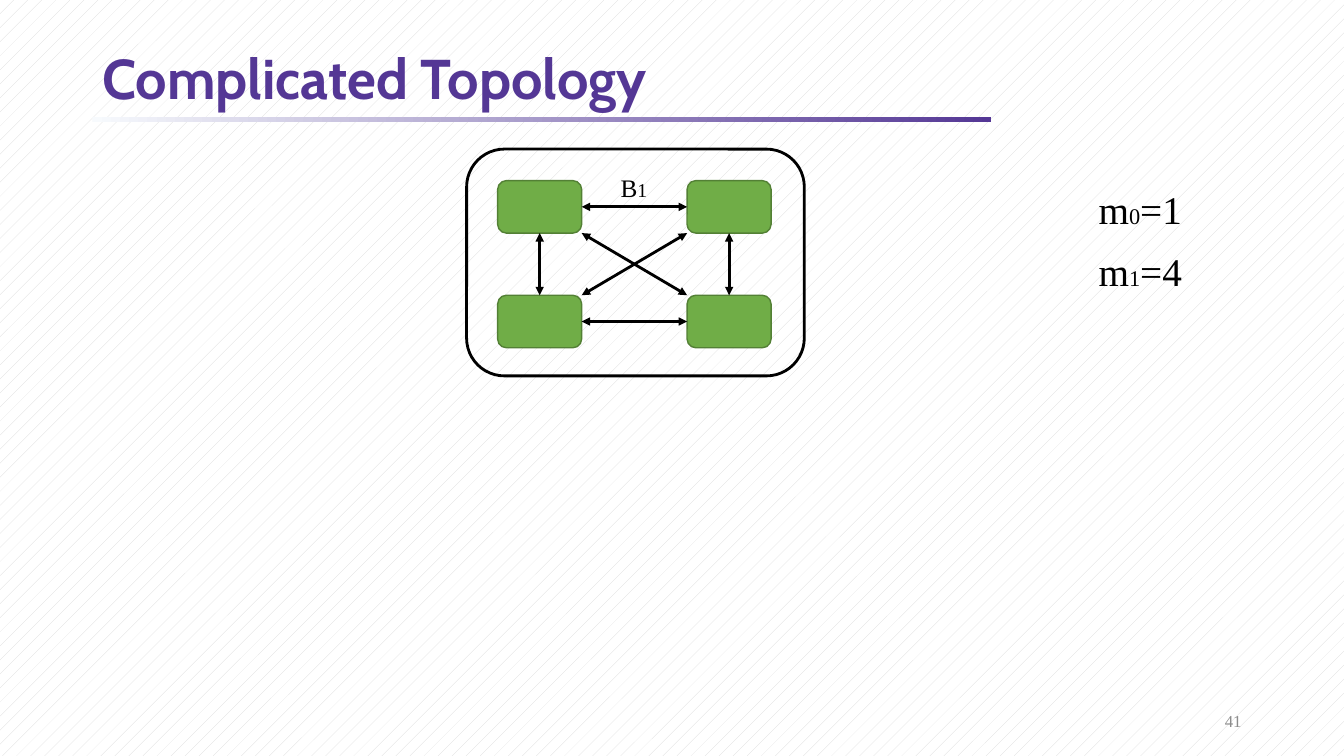
import itertools

import pptx
import pptx.dml.color
import pptx.enum.dml
import pptx.enum.shapes
import pptx.enum.text
import pptx.oxml
import pptx.oxml.ns
import pptx.util

RGBColor = pptx.dml.color.RGBColor
SHAPES = pptx.enum.shapes.MSO_SHAPE
ALIGN = pptx.enum.text.PP_ALIGN
ANCHOR = pptx.enum.text.MSO_ANCHOR

PURPLE = RGBColor(0x54, 0x37, 0x95)
PALE = RGBColor(0xF7, 0xFA, 0xFD)
GREEN = RGBColor(0x70, 0xAD, 0x47)
DARK_GREEN = RGBColor(0x53, 0x80, 0x35)
BLACK = RGBColor(0, 0, 0)
WHITE = RGBColor(0xFF, 0xFF, 0xFF)
LIGHT_GREY = RGBColor(0xD9, 0xD9, 0xD9)
GREY = RGBColor(0x8C, 0x8C, 0x8C)

SERIF = "Times New Roman"
WIDTH, HEIGHT = pptx.util.Inches(13.33), pptx.util.Inches(7.5)
COLUMNS, ROWS = 160, 90

NODE_COLUMNS, NODE_ROWS = (59.25, 81.8), (21.5, 35.15)
NODE_SIZE = (10, 6.25)
TOP, LEFT, BOTTOM, RIGHT = range(4)


def place(column, row, columns, rows):
    """Turn grid units into left, top, width and height."""
    return (int(column * WIDTH / COLUMNS), int(row * HEIGHT / ROWS),
            int(columns * WIDTH / COLUMNS), int(rows * HEIGHT / ROWS))


def set_background(slide):
    fill = slide.background.fill
    fill.patterned()
    fill.pattern = pptx.enum.dml.MSO_PATTERN.PERCENT_5
    fill.fore_color.rgb = LIGHT_GREY
    fill.back_color.rgb = WHITE


def add_text(slide, box, runs, wrap=False, align=ALIGN.LEFT,
             anchor=ANCHOR.TOP, line_spacing=None, **font_format):
    """Add one paragraph made of (text, size in points) runs."""
    frame = slide.shapes.add_textbox(*place(*box)).text_frame
    frame.word_wrap = wrap
    frame.vertical_anchor = anchor
    paragraph = frame.paragraphs[0]
    paragraph.alignment = align
    paragraph.line_spacing = line_spacing
    color = font_format.pop("color", BLACK)
    for text, size in runs:
        run = paragraph.add_run()
        run.text = text
        run.font.color.rgb = color
        values = {"name": SERIF, "size": pptx.util.Pt(size), **font_format}
        for name, value in values.items():
            setattr(run.font, name, value)


def add_rounded_box(slide, box, line_color, line_width, fill_color=None):
    shape = slide.shapes.add_shape(SHAPES.ROUNDED_RECTANGLE, *place(*box))
    shape.shadow.inherit = False
    if fill_color is None:
        shape.fill.background()
    else:
        shape.fill.solid()
        shape.fill.fore_color.rgb = fill_color
    shape.line.color.rgb = line_color
    shape.line.width = pptx.util.Pt(line_width)
    return shape


def add_title_rule(slide):
    shape = slide.shapes.add_shape(SHAPES.RECTANGLE, *place(11, 13.9, 107, 0.65))
    shape.shadow.inherit = False
    shape.line.fill.background()
    shape.fill.gradient()
    shape.fill.gradient_angle = 0
    for stop, color in zip(shape.fill.gradient_stops, (PALE, PURPLE)):
        stop.color.rgb = color


def add_double_arrow(slide, start=(0, 0), end=(0, 0)):
    connector = slide.shapes.add_connector(
        pptx.enum.shapes.MSO_CONNECTOR.STRAIGHT, *start, *end)
    connector.line.color.rgb = BLACK
    connector.line.width = pptx.util.Pt(2)
    line = connector.line._get_or_add_ln()
    for tag in ("a:headEnd", "a:tailEnd"):
        arrowhead = pptx.oxml.ns.qn(tag)
        line.append(line.makeelement(arrowhead, {"type": "triangle"}))
    properties = connector._element.spPr
    properties.append(properties.makeelement(pptx.oxml.ns.qn("a:effectLst"), {}))
    return connector


def join(slide, first, first_side, second, second_side):
    connector = add_double_arrow(slide)
    connector.begin_connect(first, first_side)
    connector.end_connect(second, second_side)


def add_full_mesh(slide):
    """Draw the four nodes and link every pair of them."""
    nodes = {
        (column, row): add_rounded_box(
            slide, (NODE_COLUMNS[column], NODE_ROWS[row], *NODE_SIZE),
            DARK_GREEN, 1, GREEN)
        for column, row in itertools.product(range(2), repeat=2)
    }
    for row in range(2):
        join(slide, nodes[0, row], RIGHT, nodes[1, row], LEFT)
    for column in range(2):
        join(slide, nodes[column, 0], BOTTOM, nodes[column, 1], TOP)

    upper_left, lower_right = nodes[0, 0], nodes[1, 1]
    inner_left = upper_left.left + upper_left.width
    inner_top = upper_left.top + upper_left.height
    inner_right, inner_bottom = lower_right.left, lower_right.top
    add_double_arrow(slide, (inner_left, inner_top), (inner_right, inner_bottom))
    add_double_arrow(slide, (inner_right, inner_top), (inner_left, inner_bottom))


def main():
    presentation = pptx.Presentation()
    presentation.slide_width, presentation.slide_height = WIDTH, HEIGHT
    slide = presentation.slides.add_slide(presentation.slide_layouts[6])
    set_background(slide)

    add_title_rule(slide)
    add_text(slide, (11, 5.15, 138, 9), [("Complicated Topology", 40)],
             wrap=True, anchor=ANCHOR.MIDDLE, line_spacing=0.9,
             name="Cabin", bold=True, color=PURPLE)
    add_text(slide, (113, 83.4, 36, 4.8), [("41", 12)], wrap=True,
             align=ALIGN.RIGHT, anchor=ANCHOR.MIDDLE, color=GREY)

    add_full_mesh(slide)
    add_text(slide, (72.7, 19.9, 5.65, 4.8), [("B", 18), ("1", 14)])
    add_rounded_box(slide, (55.55, 17.75, 40.2, 27), BLACK, 2)

    for index, value in enumerate((1, 4)):
        add_text(slide, (129.6, 21.5 + 7.4 * index, 12.5, 6.85),
                 [("m", 28), (str(index), 16), (f"={value}", 28)])

    presentation.save("out.pptx")


if __name__ == "__main__":
    main()
